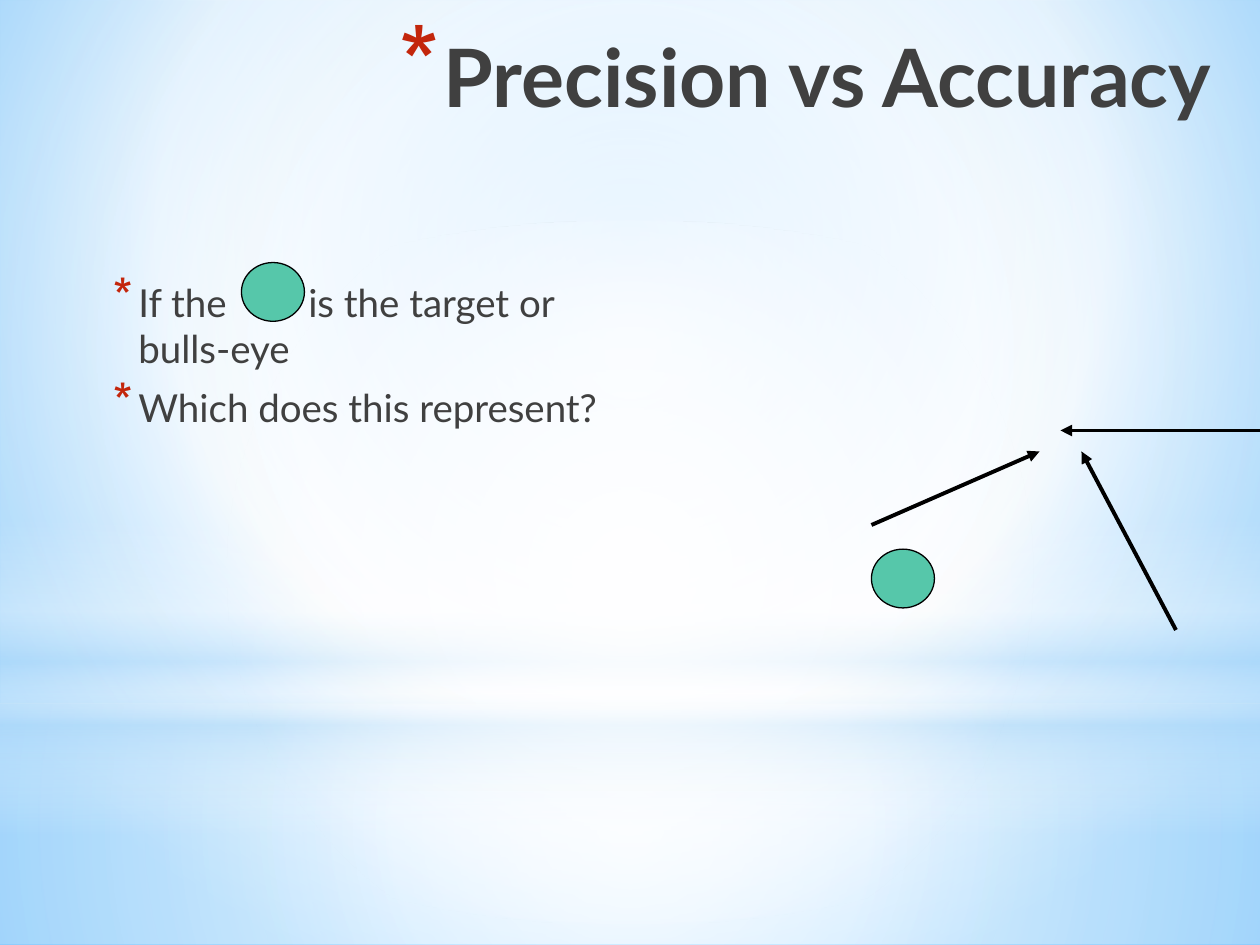
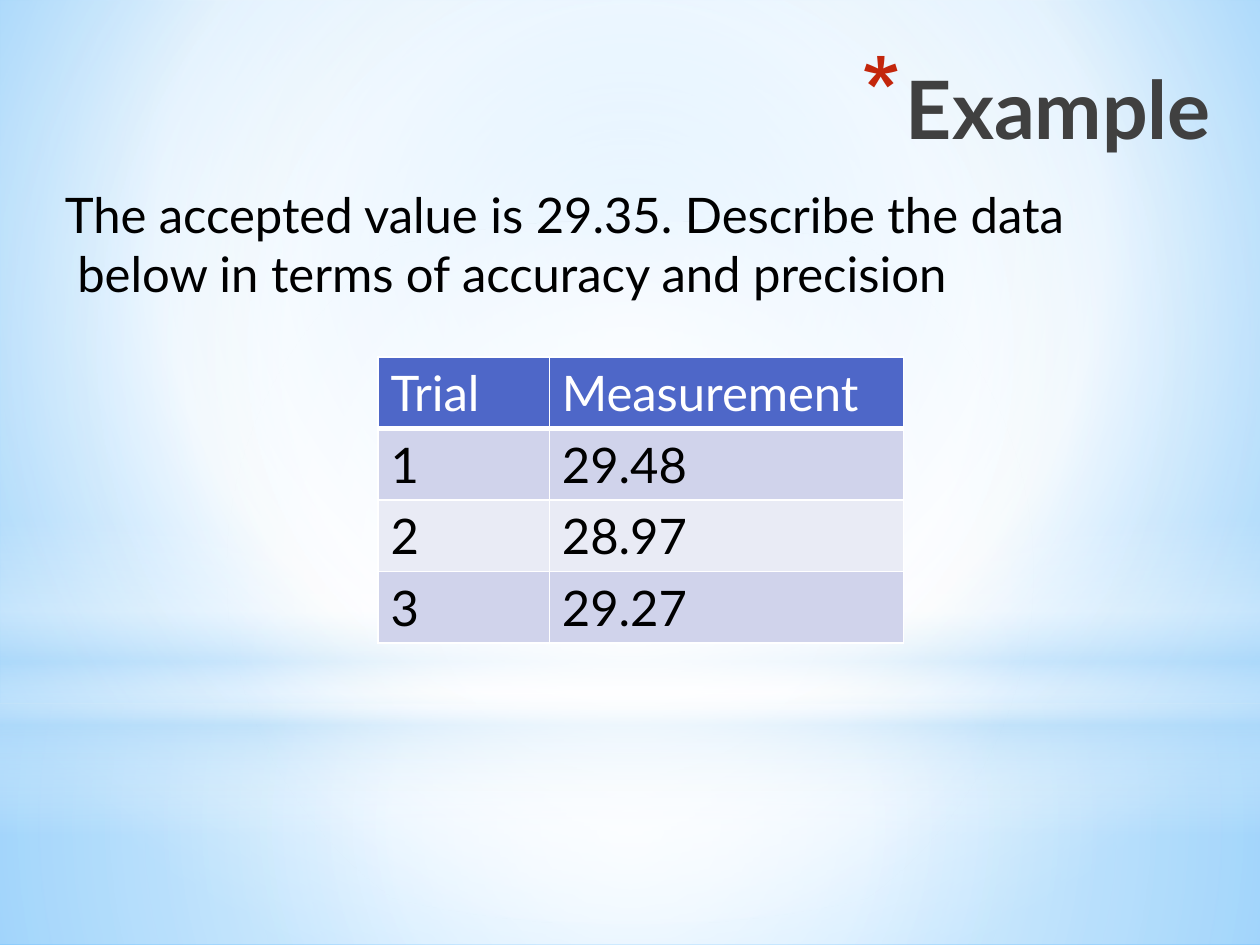
"""Build two slides on precision and accuracy in measurement."""
from dataclasses import dataclass

from pptx import Presentation
from pptx.dml.color import RGBColor as Color
from pptx.enum.shapes import MSO_CONNECTOR as Connector, MSO_SHAPE as Shape
from pptx.enum.text import PP_ALIGN as Align
from pptx.oxml import parse_xml
from pptx.oxml.ns import nsdecls, qn
from pptx.oxml.xmlchemy import OxmlElement
from pptx.util import Inches, Pt


@dataclass(frozen=True)
class Theme:
    font: str = "Lato"
    title_size: int = 46
    body_size: int = 22
    large_size: int = 28
    ink: str = "404040"
    black: str = "000000"
    white: str = "FFFFFF"
    haze: str = "B4DCFA"
    sky: str = "9ED5FF"
    deep_sky: str = "5BB9FF"
    bullet: str = "C3260C"
    target: str = "56C7AA"
    header: str = "4E67C8"
    odd_row: str = "D0D3EB"
    even_row: str = "E9EBF5"


theme = Theme()
UNIT = Inches(1) // 12
COLUMNS, ROWS = 120, 90


def paint_gradient(fill, element, stops, focus=None):
    """Give a fill a radial gradient around focus, or a vertical one."""
    fill.gradient()
    stop_xml = "".join(
        f'<a:gs pos="{position * 1000}"><a:srgbClr val="{color}">'
        f'<a:alpha val="{opacity * 1000}"/></a:srgbClr></a:gs>'
        for position, color, opacity in stops)
    direction = '<a:lin ang="5400000" scaled="0"/>'
    if focus:
        left, top, right, bottom = (share * 1000 for share in focus)
        direction = (f'<a:path path="circle"><a:fillToRect l="{left}" t="{top}" '
                     f'r="{right}" b="{bottom}"/></a:path>')
    plain = next(element.iter(qn("a:gradFill")))
    plain.getparent().replace(plain, parse_xml(
        f'<a:gradFill {nsdecls("a")} rotWithShape="1">'
        f'<a:gsLst>{stop_xml}</a:gsLst>{direction}</a:gradFill>'))


def add_text(slide, box, paragraphs, size, color, bold=False, align=Align.LEFT,
             bullet=None, spacing=(0, 0)):
    """Add a text box; paragraphs hold (text, tracking) runs, bullet is (percent, indent, hang)."""
    frame = slide.shapes.add_textbox(*(int(UNIT * n) for n in box)).text_frame
    frame.word_wrap = True
    for index, runs in enumerate(paragraphs):
        paragraph = frame.paragraphs[0] if index == 0 else frame.add_paragraph()
        paragraph.alignment = align
        paragraph.space_before, paragraph.space_after = map(Pt, spacing)
        for text, tracking in runs:
            run = paragraph.add_run()
            run.text = text
            run.font.name, run.font.size, run.font.bold = theme.font, Pt(size), bold
            run.font.color.rgb = Color.from_string(color)
            if tracking:
                run.font._element.set("spc", str(tracking * 100))
        if bullet:
            percent, indent, hang = bullet
            properties = paragraph._p.get_or_add_pPr()
            properties.set("marL", str(Inches(indent)))
            properties.set("indent", str(-Inches(hang)))
            for mark in (f'<a:buClr {nsdecls("a")}><a:srgbClr val="{theme.bullet}"/></a:buClr>',
                         f'<a:buSzPct {nsdecls("a")} val="{percent * 1000}"/>',
                         f'<a:buChar {nsdecls("a")} char="*"/>'):
                properties.append(parse_xml(mark))


presentation = Presentation()
presentation.slide_width, presentation.slide_height = COLUMNS * UNIT, ROWS * UNIT
master = presentation.slide_master
paint_gradient(master.background.fill, master.element,
               [(0, theme.sky, 100), (60, theme.white, 100), (100, theme.deep_sky, 100)],
               (20, 10, 20, 60))

CENTER = (50, 50, 50, 50)
backdrop = [
    (Shape.RECTANGLE, (0, 67, COLUMNS, 23), CENTER,
     [(0, theme.white, 91), (37, theme.white, 76), (100, theme.haze, 79)]),
    (Shape.RECTANGLE, (0, 0, COLUMNS, 67), CENTER,
     [(0, theme.white, 89), (48, theme.white, 62), (100, theme.haze, 79)]),
    (Shape.RECTANGLE, (0, 49.5, COLUMNS, 30), None,
     [(0, theme.white, 0), (29, theme.white, 30), (45, theme.haze, 40),
      (55, theme.white, 26), (65, theme.haze, 60), (100, theme.white, 0)]),
    (Shape.OVAL, (0, 21, COLUMNS, 67), CENTER,
     [(0, theme.white, 100), (56, theme.white, 0)]),
]
slides = []
for title, title_top in (("Precision vs Accuracy", 2), ("Example", 5)):
    slide = presentation.slides.add_slide(presentation.slide_layouts[6])
    for kind, box, focus, stops in backdrop:
        shape = slide.shapes.add_shape(kind, *(int(UNIT * n) for n in box))
        shape.shadow.inherit = False
        shape.line.fill.background()
        paint_gradient(shape.fill, shape.element, stops, focus)
    add_text(slide, (31, title_top, 85.5, 15), [[(title, 0)]], theme.title_size, theme.ink,
             bold=True, align=Align.RIGHT, bullet=(128, 0.35, 0.35))
    slides.append(slide)
target_slide, example_slide = slides

add_text(target_slide, (9, 26, 50, 54),
         [[("If the", 0), (" ", 41), ("is the target or bulls-eye", 0)],
          [("Which does this represent?", 0)]],
         theme.body_size, theme.ink, bullet=(130, 0.25, 0.2), spacing=(4.4, 3))

for ends in ((120, 41, 101, 41), (112, 60, 103, 43), (83, 50, 99, 43)):
    arrow = target_slide.shapes.add_connector(Connector.STRAIGHT, *(UNIT * n for n in ends))
    arrow.line.width = Pt(2.25)
    arrow.line.color.rgb = Color.from_string(theme.black)
    arrow.line._get_or_add_ln().append(
        parse_xml(f'<a:tailEnd {nsdecls("a")} type="triangle"/>'))
    arrow.element.spPr.append(OxmlElement("a:effectLst"))

for left, top in ((83, 52.3), (23, 25)):
    bullseye = target_slide.shapes.add_shape(
        Shape.OVAL, *(int(UNIT * n) for n in (left, top, 6, 5.6)))
    bullseye.shadow.inherit = False
    bullseye.fill.solid()
    bullseye.fill.fore_color.rgb = Color.from_string(theme.target)
    bullseye.line.color.rgb = Color.from_string(theme.black)
    bullseye.line.width = Pt(0.75)

add_text(example_slide, (5, 17, 108, 12.5),
         [[("The accepted value is 29.35. Describe the data", 0)],
          [(" below in terms of accuracy and precision", 0)]],
         theme.large_size, theme.black)

measurements = [("Trial", "Measurement"), ("1", "29.48"), ("2", "28.97"), ("3", "29.27")]
table = example_slide.shapes.add_table(
    len(measurements), 2, *(int(UNIT * n) for n in (36, 34, 50, 27.2))).table
for column, width in zip(table.columns, (1.36, 2.81)):
    column.width = Inches(width)
for row_index, values in enumerate(measurements):
    is_header = row_index == 0
    row_fill = theme.header if is_header else theme.odd_row if row_index % 2 else theme.even_row
    for column_index, value in enumerate(values):
        cell = table.cell(row_index, column_index)
        properties = cell._tc.get_or_add_tcPr()
        for side in "LRTB":
            width = Pt(3 if is_header and side == "B" else 1)
            properties.append(parse_xml(
                f'<a:ln{side} {nsdecls("a")} w="{width}"><a:solidFill>'
                f'<a:srgbClr val="{theme.white}"/></a:solidFill></a:ln{side}>'))
        cell.fill.solid()
        cell.fill.fore_color.rgb = Color.from_string(row_fill)
        run = cell.text_frame.paragraphs[0].add_run()
        run.text = value
        run.font.name, run.font.size, run.font.bold = theme.font, Pt(theme.large_size), False
        run.font.color.rgb = Color.from_string(theme.white if is_header else theme.black)

presentation.save("out.pptx")
